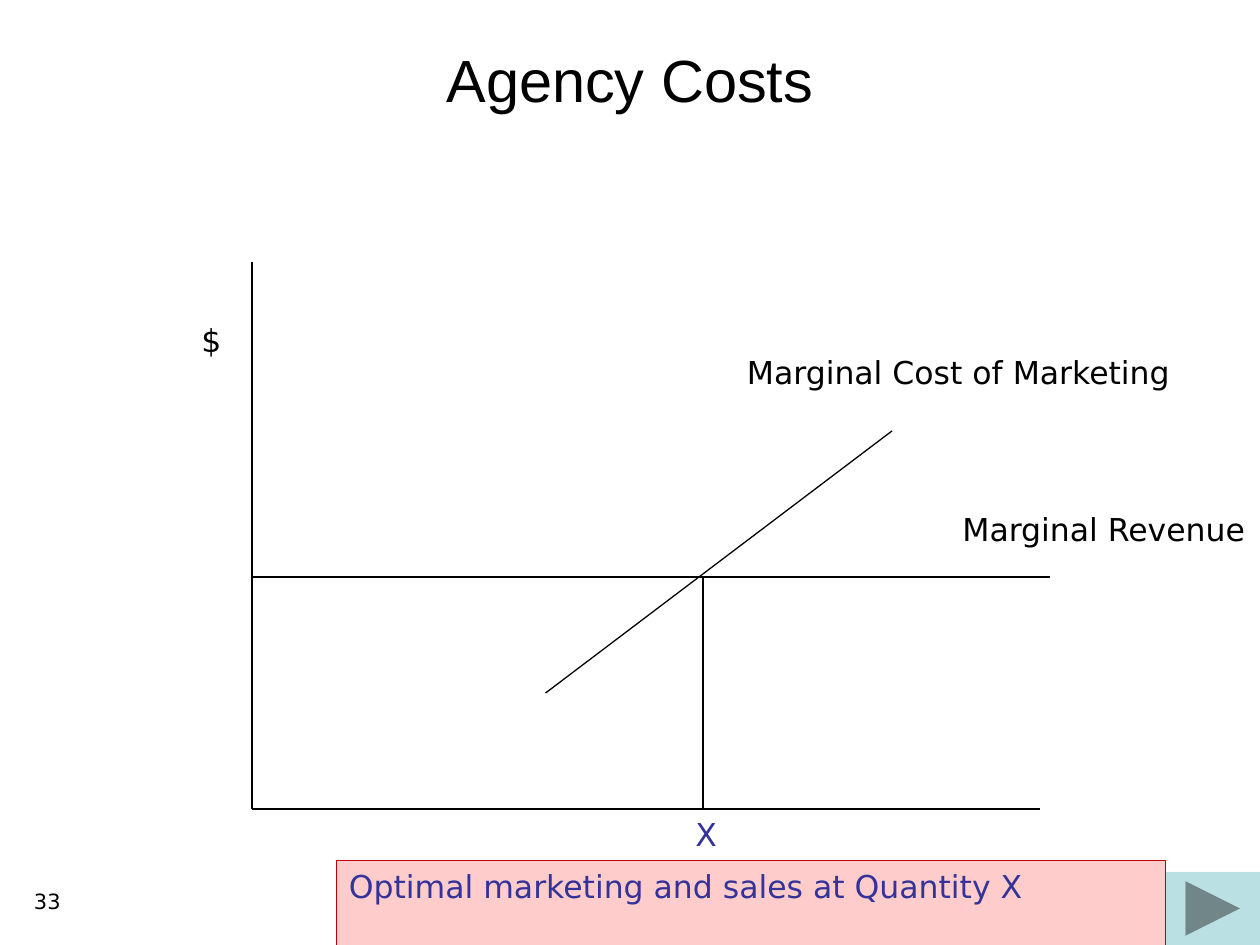
from lxml import etree
from pptx import Presentation
from pptx.dml.color import RGBColor
from pptx.enum.shapes import MSO_CONNECTOR, MSO_SHAPE
from pptx.enum.text import MSO_ANCHOR, PP_ALIGN
from pptx.oxml.ns import qn
from pptx.util import Inches, Pt

STRAIGHT = MSO_CONNECTOR.STRAIGHT
RECTANGLE = MSO_SHAPE.RECTANGLE
NEXT_BUTTON = MSO_SHAPE.ACTION_BUTTON_FORWARD_OR_NEXT
LEFT, CENTER, RIGHT = PP_ALIGN.LEFT, PP_ALIGN.CENTER, PP_ALIGN.RIGHT
TOP, MIDDLE = MSO_ANCHOR.TOP, MSO_ANCHOR.MIDDLE

BLACK, INDIGO = "000000", "333399"
BODY_FONT, TITLE_FONT = "DejaVu Sans", "Arial"
AXIS_X, AXIS_Y = 2, 6.42
REVENUE_Y, QUANTITY_X = 4.58, 5.58


def color(value):
    """Turn a hex string into a colour."""
    return RGBColor.from_string(value)


def write(shape, text, text_color=BLACK, size=18, font=BODY_FONT,
          align=LEFT, anchor=TOP, wrap=True):
    """Write one paragraph into a shape."""
    frame = shape.text_frame
    frame.word_wrap = wrap
    frame.vertical_anchor = anchor
    para = frame.paragraphs[0]
    para.text = text
    para.alignment = align
    para.font.name = font
    para.font.size = Pt(size)
    para.font.color.rgb = color(text_color)


def add_label(page, area, text, **style):
    """Add a text box at left, top, width, height in inches."""
    write(page.shapes.add_textbox(*map(Inches, area)), text, **style)


def add_line(page, start, end):
    """Draw a thin black line between two points in inches."""
    line = page.shapes.add_connector(STRAIGHT, *map(Inches, start + end))
    line.line.color.rgb = color(BLACK)
    line.line.width = Pt(0.75)
    etree.SubElement(line._element.spPr, qn("a:effectLst"))


def add_block(page, kind, area, fill, outline=None):
    """Add a filled preset shape and return it."""
    block = page.shapes.add_shape(kind, *map(Inches, area))
    block.shadow.inherit = False
    block.fill.solid()
    block.fill.fore_color.rgb = color(fill)
    if outline:
        block.line.color.rgb = color(outline)
        block.line.width = Pt(0.75)
    else:
        block.line.fill.background()
    return block


def add_graph(page):
    """Draw the axes, the two curves and their labels."""
    origin = (AXIS_X, AXIS_Y)
    add_line(page, (AXIS_X, 2.08), origin)
    add_line(page, origin, (8.25, AXIS_Y))
    add_line(page, (AXIS_X, REVENUE_Y), (8.33, REVENUE_Y))
    add_line(page, (4.33, 5.5), (7.08, 3.42))
    add_line(page, (QUANTITY_X, REVENUE_Y), (QUANTITY_X, AXIS_Y))
    add_label(page, (1.5, 2.5, 1.95, 0.4), "$")
    add_label(page, (7.54, 4, 2.46, 0.4), "Marginal Revenue", wrap=False)
    add_label(page, (5.83, 2.75, 3.61, 0.4), "Marginal Cost of Marketing")
    add_label(page, (5.42, AXIS_Y, 0.54, 0.4), "X", text_color=INDIGO)


def main():
    """Build the slide and save it."""
    deck = Presentation()
    deck.slide_width, deck.slide_height = Inches(10), Inches(7.5)
    page = deck.slides.add_slide(deck.slide_layouts[6])
    add_block(page, NEXT_BUTTON, (9.25, 6.92, 0.75, 0.58), "BBE0E3")
    add_label(page, (0, 0, 10, 1.25), "Agency Costs", size=34,
              font=TITLE_FONT, align=CENTER, anchor=MIDDLE)
    add_label(page, (0, 7, 0.58, 0.5), "33", size=12, align=RIGHT)
    add_graph(page)
    box = add_block(page, RECTANGLE, (2.67, 6.83, 6.58, 0.71), "FFCCCC", "C00000")
    write(box, "Optimal marketing and sales at Quantity X", text_color=INDIGO)
    deck.save("out.pptx")


if __name__ == "__main__":
    main()
